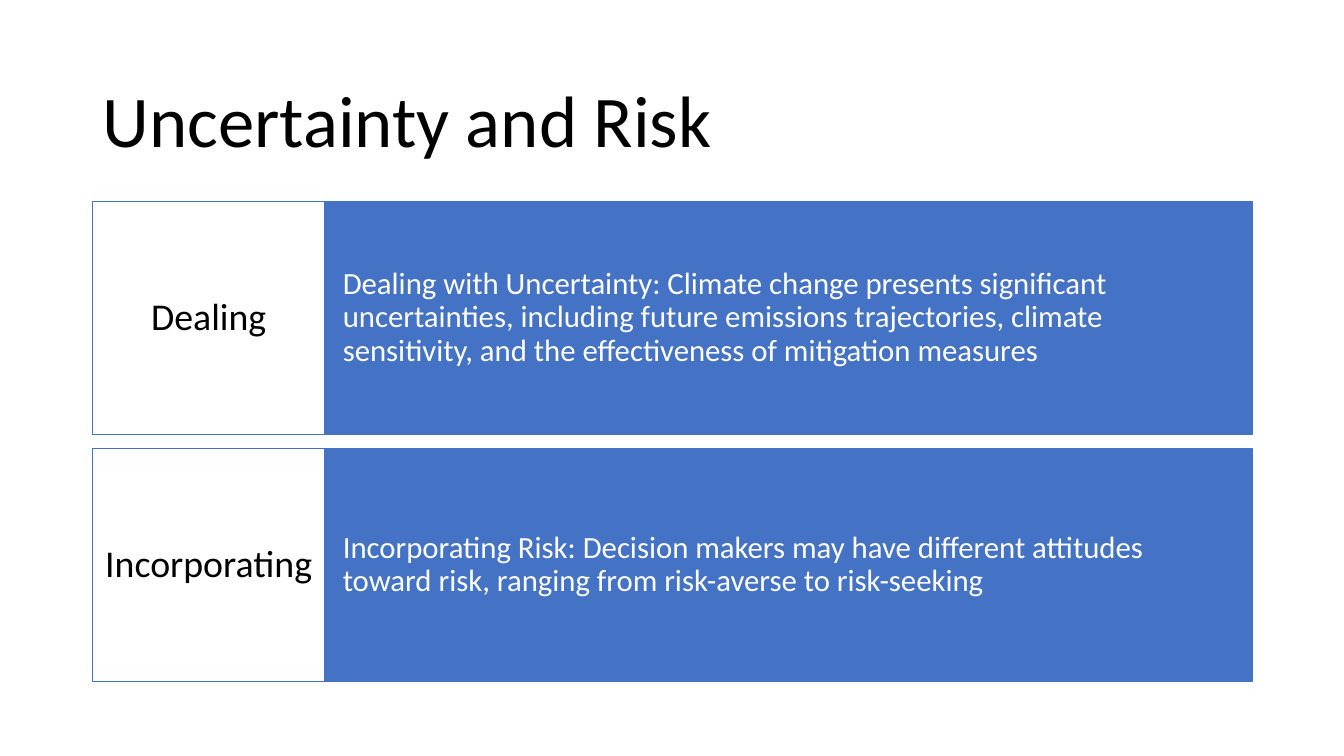
"""Build the Uncertainty and Risk slide with two labelled rows."""
from dataclasses import dataclass

from pptx import Presentation
from pptx.dml.color import RGBColor
from pptx.enum.shapes import MSO_SHAPE
from pptx.enum.text import MSO_ANCHOR, PP_ALIGN
from pptx.shapes.autoshape import Shape
from pptx.slide import Slide
from pptx.util import Emu, Pt

RECTANGLE = MSO_SHAPE.RECTANGLE
MIDDLE = MSO_ANCHOR.MIDDLE
LEFT, CENTER = PP_ALIGN.LEFT, PP_ALIGN.CENTER
EMU_PER_PX = 9144
FONT = "Calibri"
COLORS = {"blue": "4472C4", "white": "FFFFFF", "black": "000000"}
MARGIN_LEFT, LABEL_WIDTH, DETAIL_WIDTH = 92, 230, 920
ROW_TOP, ROW_HEIGHT, ROW_PITCH = 200, 231, 245


@dataclass(frozen=True)
class Row:
    label: str
    detail: str


@dataclass(frozen=True)
class Style:
    size: int
    color: str
    align: PP_ALIGN
    inset_x: int
    inset_y: int


TITLE_STYLE = Style(52, "black", LEFT, 10, 5)
LABEL_STYLE = Style(27, "black", CENTER, 11, 23)
DETAIL_STYLE = Style(22, "white", LEFT, 18, 59)

ROWS = [
    Row(
        "Dealing",
        "Dealing with Uncertainty: Climate change presents significant "
        "uncertainties, including future emissions trajectories, climate "
        "sensitivity, and the effectiveness of mitigation measures",
    ),
    Row(
        "Incorporating",
        "Incorporating Risk: Decision makers may have different attitudes "
        "toward risk, ranging from risk-averse to risk-seeking",
    ),
]


def px(length: int) -> Emu:
    return Emu(length * EMU_PER_PX)


def color(name: str) -> RGBColor:
    return RGBColor.from_string(COLORS[name])


def write_text(shape: Shape, text: str, style: Style) -> None:
    frame = shape.text_frame
    frame.text = text
    frame.word_wrap = True
    frame.vertical_anchor = MIDDLE
    frame.margin_left = frame.margin_right = px(style.inset_x)
    frame.margin_top = frame.margin_bottom = px(style.inset_y)
    paragraph = frame.paragraphs[0]
    paragraph.alignment = style.align
    paragraph.line_spacing = 0.9
    font = paragraph.runs[0].font
    font.name = FONT
    font.size = Pt(style.size)
    font.color.rgb = color(style.color)


def add_panel(slide: Slide, left: int, top: int, width: int, fill: str,
              text: str, style: Style) -> None:
    shape = slide.shapes.add_shape(
        RECTANGLE, px(left), px(top), px(width), px(ROW_HEIGHT))
    shape.shadow.inherit = False
    shape.fill.solid()
    shape.fill.fore_color.rgb = color(fill)
    shape.line.color.rgb = color("blue")
    shape.line.width = Pt(1)
    write_text(shape, text, style)


def main() -> None:
    presentation = Presentation()
    presentation.slide_width = px(1333)
    presentation.slide_height = px(750)
    slide = presentation.slides.add_slide(presentation.slide_layouts[6])

    title = slide.shapes.add_textbox(px(MARGIN_LEFT), px(61), px(1150), px(124))
    write_text(title, "Uncertainty and Risk", TITLE_STYLE)

    for index, row in enumerate(ROWS):
        top = ROW_TOP + index * ROW_PITCH
        add_panel(slide, MARGIN_LEFT + LABEL_WIDTH, top, DETAIL_WIDTH,
                  "blue", row.detail, DETAIL_STYLE)
        add_panel(slide, MARGIN_LEFT, top, LABEL_WIDTH,
                  "white", row.label, LABEL_STYLE)

    presentation.save("out.pptx")


if __name__ == "__main__":
    main()
